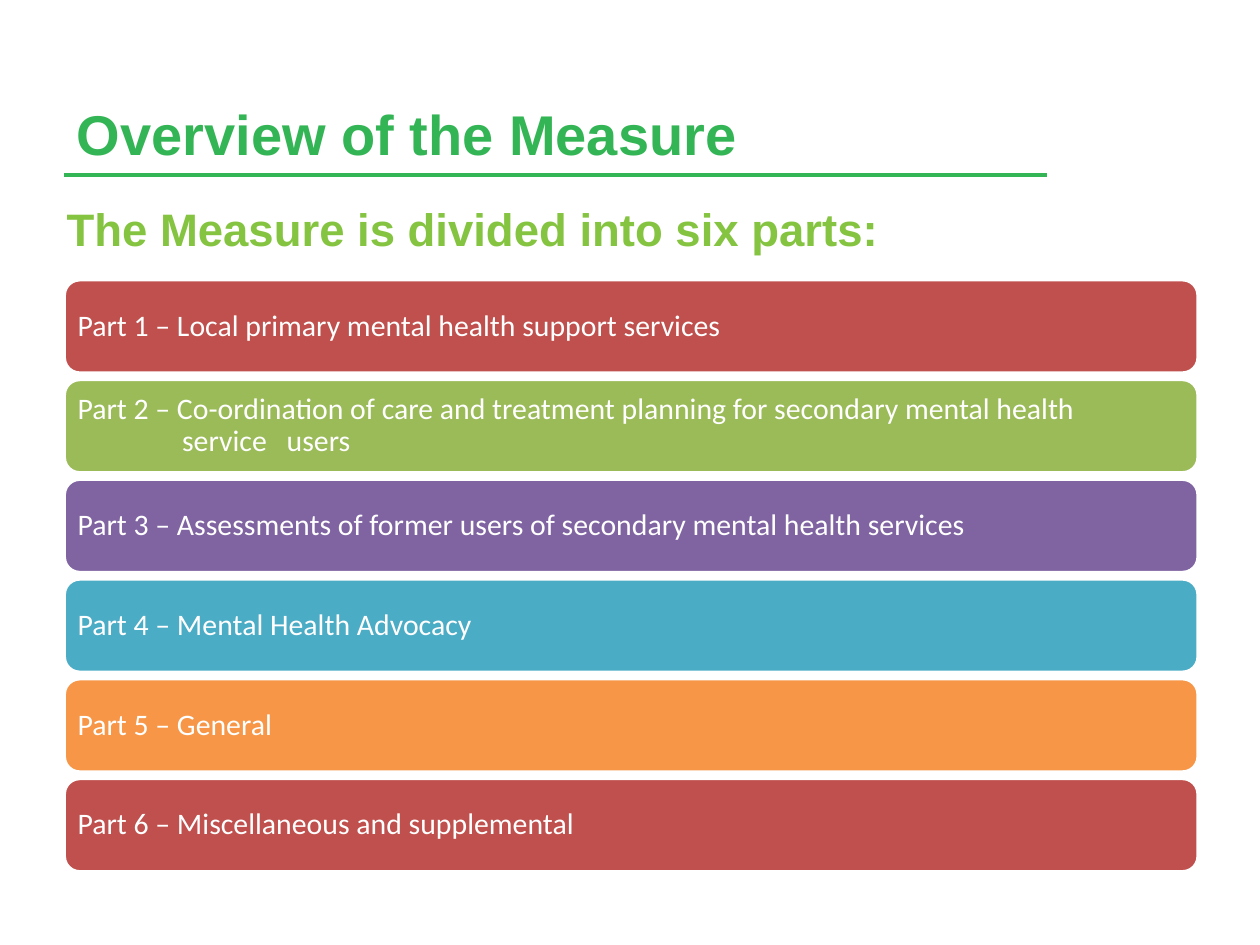
from lxml.etree import SubElement
from pptx import Presentation
from pptx.dml.color import RGBColor
from pptx.enum.shapes import MSO_CONNECTOR, MSO_SHAPE
from pptx.enum.text import MSO_ANCHOR, MSO_AUTO_SIZE, PP_ALIGN
from pptx.oxml.ns import qn
from pptx.util import Inches, Pt

GREEN = "34B555"
PARTS = [
    ("Part 1 – Local primary mental health support services", "C0504D"),
    ("Part 2 – Co-ordination of care and treatment planning for secondary mental health"
     "\v\tservice\tusers", "9BBB59"),
    ("Part 3 – Assessments of former users of secondary mental health services", "8064A2"),
    ("Part 4 – Mental Health Advocacy", "4BACC6"),
    ("Part 5 – General", "F79646"),
    ("Part 6 – Miscellaneous and supplemental", "C0504D"),
]


def color(value):
    return RGBColor.from_string(value)


def write(frame, text, font, size, fill, bold=False):
    """Put one left-aligned, formatted paragraph in a text frame."""
    frame.word_wrap = True
    para = frame.paragraphs[0]
    para.text = text
    para.alignment = PP_ALIGN.LEFT
    for span in para.runs:
        span.font.name = font
        span.font.size = Pt(size)
        span.font.bold = bold
        span.font.color.rgb = color(fill)
    return para


def add_heading(page, left, top, width, height):
    """Place the title with a rule just below it."""
    title = page.shapes.title
    title.left, title.top = Inches(left), Inches(top)
    title.width, title.height = Inches(width), Inches(height)
    frame = title.text_frame
    frame.auto_size = MSO_AUTO_SIZE.NONE
    frame.vertical_anchor = MSO_ANCHOR.BOTTOM
    write(frame, "Overview of the Measure", "Arial", 32, GREEN, bold=True)

    rule_top = Inches(top + height + 0.02)
    rule = page.shapes.add_connector(
        MSO_CONNECTOR.STRAIGHT, Inches(left), rule_top, Inches(left + width), rule_top)
    rule.line.color.rgb = color(GREEN)
    rule.line.width = Pt(2)
    SubElement(rule._element.spPr, qn("a:effectLst"))


def add_subheading(page, left, top, width, height):
    box = page.shapes.add_textbox(Inches(left), Inches(top), Inches(width), Inches(height))
    write(box.text_frame, "The Measure is divided into six parts:", "Arial", 26, "85C441", bold=True)


def add_tab_stops(para, step, count):
    stops = SubElement(para._p.get_or_add_pPr(), qn("a:tabLst"))
    for number in range(1, count + 1):
        SubElement(stops, qn("a:tab"), pos=str(Inches(step * number)), algn="l")


def add_parts(page, left, top, width, height, gap=0.05):
    """Stack one rounded bar per part, evenly spaced down the box."""
    bar_height = (height - gap * (len(PARTS) - 1)) / len(PARTS)
    for index, (text, fill) in enumerate(PARTS):
        bar = page.shapes.add_shape(
            MSO_SHAPE.ROUNDED_RECTANGLE, Inches(left), Inches(top + index * (bar_height + gap)),
            Inches(width), Inches(bar_height))
        bar.shadow.inherit = False
        bar.fill.solid()
        bar.fill.fore_color.rgb = color(fill)
        bar.line.color.rgb = color("FFFFFF")
        bar.line.width = Pt(2)
        frame = bar.text_frame
        frame.vertical_anchor = MSO_ANCHOR.MIDDLE
        frame.margin_left = frame.margin_right = Inches(0.07)
        frame.margin_top = frame.margin_bottom = Inches(0.07)
        para = write(frame, text, "Calibri", 17, "FFFFFF")
        para.line_spacing = 0.9
        if "\t" in text:
            add_tab_stops(para, 0.83, 2)


def main():
    deck = Presentation()
    deck.slide_width, deck.slide_height = Inches(10), Inches(7.5)
    page = deck.slides.add_slide(deck.slide_layouts[5])
    add_heading(page, 0.51, 0.28, 7.8, 1.09)
    add_parts(page, 0.51, 2.22, 9, 4.7)
    add_subheading(page, 0.43, 1.55, 8.03, 0.54)
    deck.save("out.pptx")


if __name__ == "__main__":
    main()
